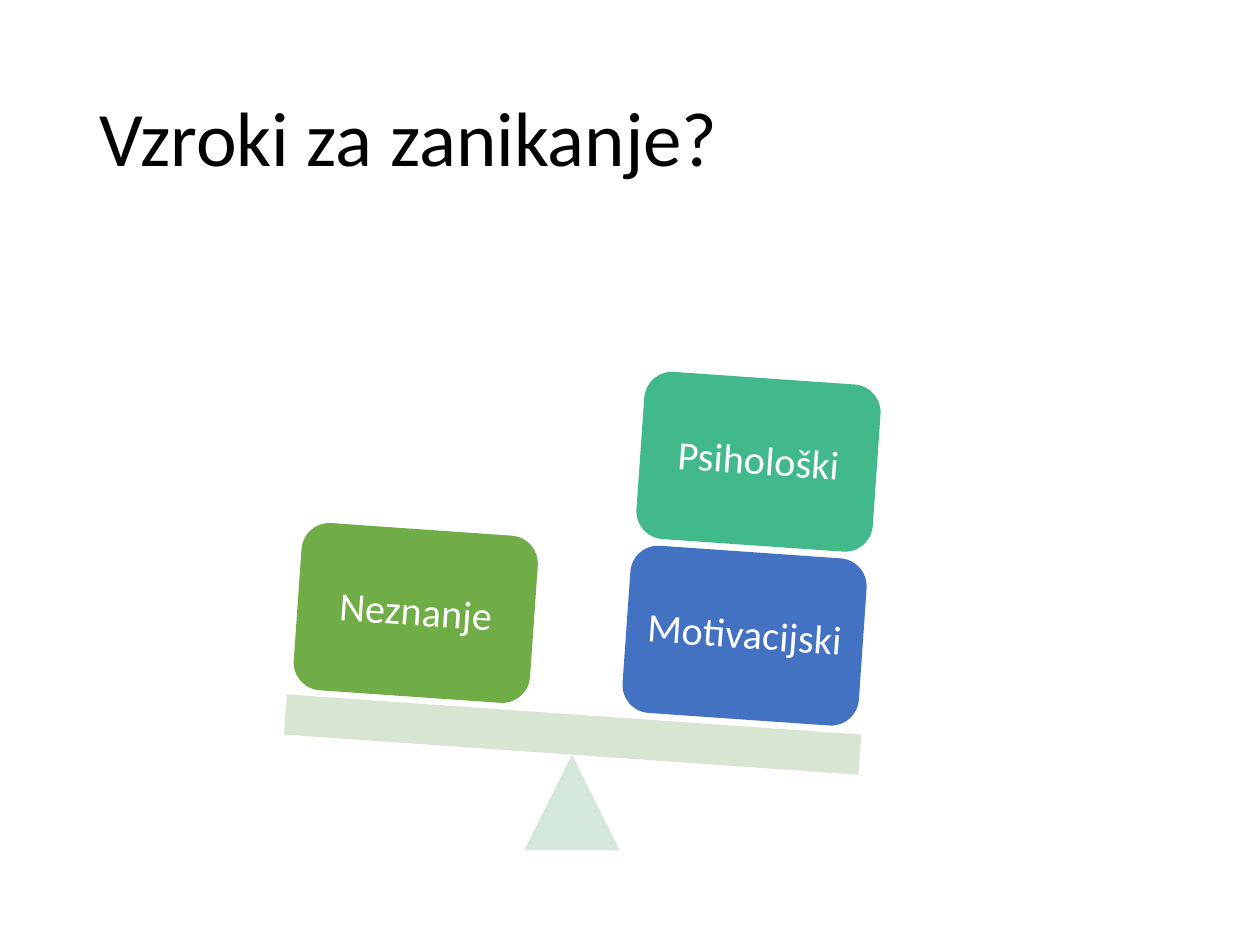
from lxml import etree
from pptx import Presentation
from pptx.dml.color import RGBColor
from pptx.enum.shapes import MSO_SHAPE
from pptx.enum.text import MSO_ANCHOR, PP_ALIGN
from pptx.oxml.ns import qn
from pptx.util import Inches, Pt

TRIANGLE, RECT, ROUNDED = (
    MSO_SHAPE.ISOSCELES_TRIANGLE, MSO_SHAPE.RECTANGLE, MSO_SHAPE.ROUNDED_RECTANGLE)
LEFT, CENTER = PP_ALIGN.LEFT, PP_ALIGN.CENTER
MIDDLE = MSO_ANCHOR.MIDDLE

BLACK = RGBColor(0x00, 0x00, 0x00)
WHITE = RGBColor(0xFF, 0xFF, 0xFF)
BLUE = RGBColor(0x44, 0x72, 0xC3)
TEAL = RGBColor(0x42, 0xB9, 0x8B)
GREEN = RGBColor(0x70, 0xAD, 0x47)
PALE_TEAL = RGBColor(0xCF, 0xE5, 0xD8)
PALE_GREEN = RGBColor(0xD5, 0xE3, 0xCF)

TILT = 4
BLOCK_W, BLOCK_H = 1.88, 1.33


class SlideBuilder:
    font = "Calibri"

    def __init__(self, prs):
        self.s = prs.slides.add_slide(prs.slide_layouts[5])

    def set_text(self, shape, text, size, color, align):
        tf = shape.text_frame
        tf.text = text
        tf.word_wrap = True
        tf.vertical_anchor = MIDDLE
        p = tf.paragraphs[0]
        p.alignment = align
        p.line_spacing = 0.9
        font = p.runs[0].font
        font.name, font.size = self.font, Pt(size)
        font.color.rgb = color

    def title(self, text, x, y, w, h):
        sp = self.s.shapes.title
        sp.left, sp.top, sp.width, sp.height = map(Inches, (x, y, w, h))
        self.set_text(sp, text, 44, BLACK, LEFT)

    def shape(self, kind, x, y, w, h, color, rotation=0, opacity=100):
        sp = self.s.shapes.add_shape(kind, *map(Inches, (x, y, w, h)))
        sp.shadow.inherit = False
        sp.rotation = rotation
        sp.fill.solid()
        sp.fill.fore_color.rgb = color
        sp.line.fill.background()
        if opacity < 100:
            clr = sp._element.spPr.find(qn("a:solidFill")).find(qn("a:srgbClr"))
            etree.SubElement(clr, qn("a:alpha")).set("val", str(opacity * 1000))
        return sp

    def block(self, text, x, y, color):
        sp = self.shape(ROUNDED, x, y, BLOCK_W, BLOCK_H, color, TILT)
        tf = sp.text_frame
        tf.margin_left = tf.margin_right = Inches(0.05)
        self.set_text(sp, text, 23, WHITE, CENTER)


def main():
    prs = Presentation()
    prs.slide_width, prs.slide_height = Inches(10), Inches(7.5)
    slide = SlideBuilder(prs)

    slide.title("Vzroki za zanikanje?", 0.69, 0.4, 8.62, 1.45)

    # Scale: pivot and tilted beam
    slide.shape(TRIANGLE, 4.16, 5.99, 0.76, 0.76, PALE_TEAL, opacity=90)
    slide.shape(RECT, 2.26, 5.67, 4.57, 0.32, PALE_GREEN, TILT, opacity=90)

    # Causes resting on the beam
    for text, x, y, color in (
        ("Motivacijski", 4.97, 4.38, BLUE),
        ("Psihološki", 5.08, 3, TEAL),
        ("Neznanje", 2.36, 4.2, GREEN),
    ):
        slide.block(text, x, y, color)

    prs.save("out.pptx")


if __name__ == "__main__":
    main()
